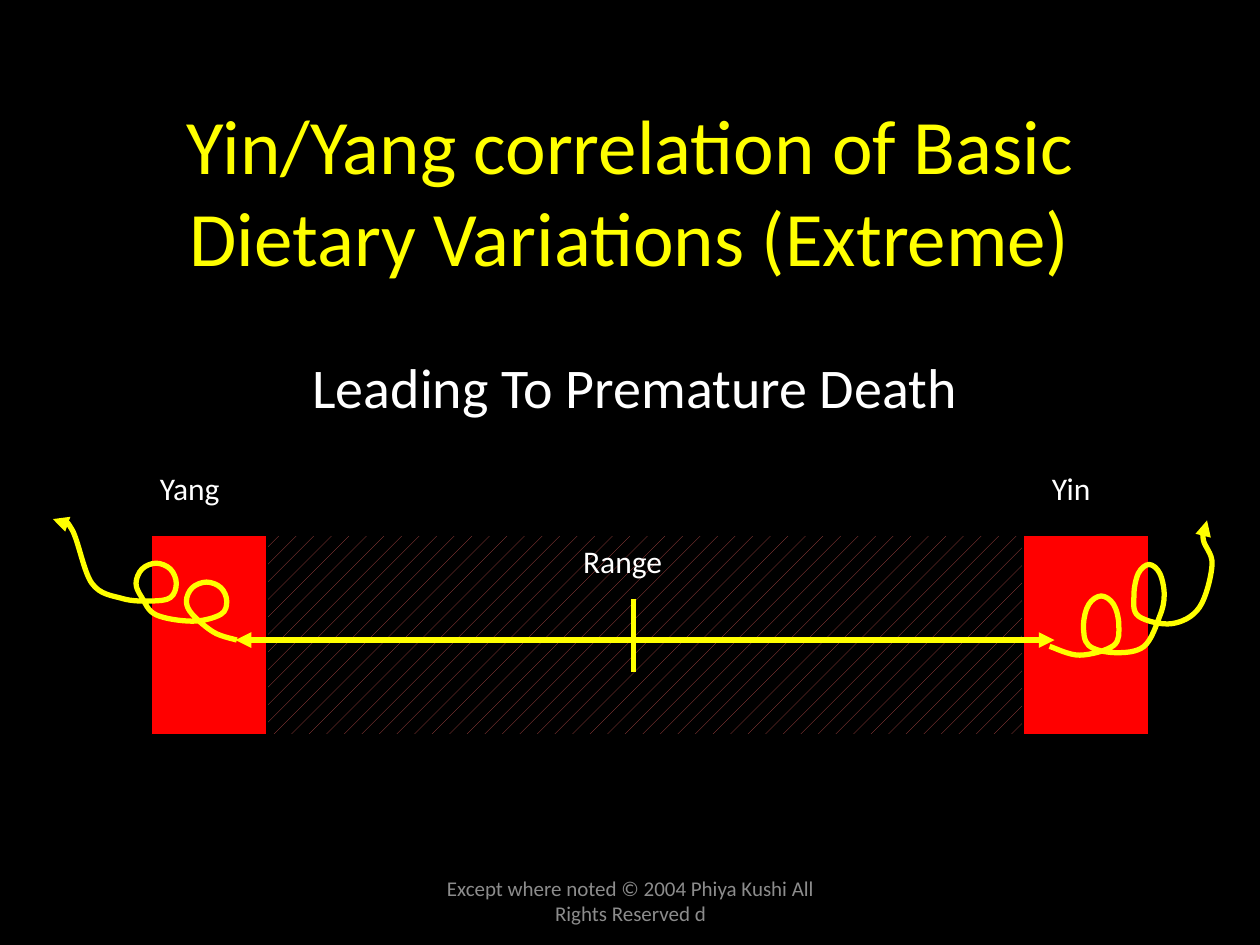
from dataclasses import dataclass
from math import cos, radians, sin

from lxml import etree
from pptx import Presentation
from pptx.dml.color import RGBColor
from pptx.enum.dml import MSO_PATTERN_TYPE as Pattern
from pptx.enum.shapes import MSO_CONNECTOR as Connector, MSO_SHAPE as Shape
from pptx.enum.text import MSO_ANCHOR as Anchor, MSO_AUTO_SIZE as AutoSize, PP_ALIGN as Align
from pptx.oxml.ns import qn
from pptx.util import Inches, Pt

COLORS = {
    "background": "000000",
    "accent": "FFFF00",
    "text": "FFFFFF",
    "footer": "8C8C8C",
    "extreme": "FF0000",
    "hatch": "C0504D",
}
FONT = "Calibri"
CLOCKWISE, COUNTERCLOCKWISE = 1, -1


@dataclass
class Loop:
    center: tuple
    radii: tuple

    def points(self, turn):
        angles = [radians(90 + turn * step) for step in range(45, 316, 45)]
        (x, y), (across, down) = self.center, self.radii
        return [(x + across * cos(angle), y + down * sin(angle)) for angle in angles]


@dataclass
class Spiral:
    turn: int
    lead: list
    inner_loop: Loop
    link: list
    outer_loop: Loop
    tail: list

    def points(self):
        return (self.lead + self.inner_loop.points(self.turn)
                + self.link + self.outer_loop.points(self.turn) + self.tail)


SPIRALS = {
    "Yang": Spiral(
        turn=CLOCKWISE,
        lead=[(0.68, 0.83), (0.5, 0.77)],
        inner_loop=Loop(center=(0.44, 0.52), radii=(0.16, 0.15)),
        link=[(0.33, 0.68), (0.04, 0.63)],
        outer_loop=Loop(center=(0.04, 0.38), radii=(0.16, 0.16)),
        tail=[(0, 0.52), (-0.23, 0.5), (-0.47, 0.38), (-0.63, -0.05), (-0.78, -0.13)],
    ),
    "Yin": Spiral(
        turn=COUNTERCLOCKWISE,
        lead=[(7.13, 0.88), (7.37, 0.95)],
        inner_loop=Loop(center=(7.54, 0.71), radii=(0.14, 0.23)),
        link=[(7.65, 0.93), (7.88, 0.88)],
        outer_loop=Loop(center=(7.92, 0.47), radii=(0.12, 0.24)),
        tail=[(8.1, 0.7), (8.32, 0.57), (8.42, 0.23), (8.35, 0.03), (8.38, -0.12)],
    ),
}


def color(name):
    return RGBColor.from_string(COLORS[name])


def set_attributes(target, values):
    for name, value in values.items():
        setattr(target, name, value)


def fill_solid(fill, color_name):
    fill.solid()
    fill.fore_color.rgb = color(color_name)


def add_text(slide, box, text, size, color_name, align=Align.CENTER,
             anchor=Anchor.TOP, wrap=True):
    shape = slide.shapes.add_textbox(*map(Inches, box))
    frame = shape.text_frame
    set_attributes(frame, {
        "word_wrap": wrap,
        "vertical_anchor": anchor,
        "auto_size": AutoSize.NONE if wrap else AutoSize.SHAPE_TO_FIT_TEXT,
    })
    paragraph = frame.paragraphs[0]
    paragraph.alignment = align
    run = paragraph.add_run()
    run.text = text
    set_attributes(run.font, {"name": FONT, "size": Pt(size)})
    run.font.color.rgb = color(color_name)


def style_line(shape, ends=()):
    shape.line.color.rgb = color("accent")
    shape.line.width = Pt(3)
    line = shape.line._get_or_add_ln()
    for end in ends:
        etree.SubElement(line, qn(f"a:{end}"), type="triangle")


def add_line(slide, start, finish, ends=()):
    points = map(Inches, (*start, *finish))
    connector = slide.shapes.add_connector(Connector.STRAIGHT, *points)
    style_line(connector, ends)
    etree.SubElement(connector._element.spPr, qn("a:effectLst"))


def add_block(slide, box):
    shape = slide.shapes.add_shape(Shape.RECTANGLE, *map(Inches, box))
    shape.shadow.inherit = False
    shape.line.color.rgb = color("background")
    shape.line.width = Pt(0.75)
    return shape


def smooth_controls(points):
    padded = [points[0], *points, points[-1]]
    controls = []
    for before, start, finish, after in zip(padded, padded[1:], padded[2:], padded[3:]):
        leaving = [s + (f - b) / 6 for b, s, f in zip(before, start, finish)]
        arriving = [f - (a - s) / 6 for s, f, a in zip(start, finish, after)]
        controls += [leaving, arriving, finish]
    return controls


def convert_to_curves(shape):
    segments = list(shape._element.iter(qn("a:lnTo")))
    for first in range(0, len(segments), 3):
        curve = etree.Element(qn("a:cubicBezTo"))
        segments[first].addprevious(curve)
        for segment in segments[first:first + 3]:
            curve.append(segment[0])
            segment.getparent().remove(segment)


def add_spiral(slide, origin, spiral):
    points = spiral.points()
    builder = slide.shapes.build_freeform(*map(Inches, points[0]))
    controls = [tuple(map(Inches, point)) for point in smooth_controls(points)]
    builder.add_line_segments(controls, close=False)
    shape = builder.convert_to_shape(*map(Inches, origin))
    shape.shadow.inherit = False
    shape.fill.background()
    style_line(shape, ["tailEnd"])
    convert_to_curves(shape)


def add_headings(slide, box):
    left, top, width, height = box
    add_text(slide, (left, top, width, 1.67),
             "Yin/Yang correlation of Basic Dietary Variations (Extreme)",
             44, "accent", anchor=Anchor.MIDDLE)
    add_text(slide, (left + 1.58, top + height - 0.67, 5.42, 0.67),
             "Leading To Premature Death", 32, "text")


def add_range_diagram(slide, box):
    left, top, width, height = box
    middle = add_block(slide, (left + 0.88, top, 6.08, height))
    middle.fill.patterned()
    middle.fill.pattern = Pattern.PERCENT_5
    middle.fill.fore_color.rgb = color("hatch")
    middle.fill.back_color.rgb = color("background")
    for offset, block_width in ((width - 1, 1), (0, 0.92)):
        block = add_block(slide, (left + offset, top, block_width, height))
        fill_solid(block.fill, "extreme")

    axis, center = top + 0.83, left + 3.83
    add_line(slide, (left + 0.67, axis), (left + 7.17, axis), ["headEnd", "tailEnd"])
    add_line(slide, (center, top + 0.5), (center, top + 1.08))
    labels = (("Yang", -0.03, -0.58, 0.92), ("Yin", 7.05, -0.58, 0.7),
              ("Range", 3.33, 0, 1.05))
    for text, x, y, label_width in labels:
        add_text(slide, (left + x, top + y, label_width, 0.5), text, 18, "text",
                 align=Align.LEFT, wrap=False)
    for spiral in SPIRALS.values():
        add_spiral(slide, (left, top), spiral)


def add_footer(slide, box):
    add_text(slide, box, "Except where noted © 2004 Phiya Kushi All Rights Reserved d",
             12, "footer", anchor=Anchor.MIDDLE)


def main():
    presentation = Presentation()
    set_attributes(presentation, {"slide_width": Inches(10), "slide_height": Inches(7.5)})
    slide = presentation.slides.add_slide(presentation.slide_layouts[6])
    fill_solid(slide.background.fill, "background")
    add_footer(slide, (3.42, 6.95, 3.17, 0.4))
    add_headings(slide, (0.75, 0.67, 8.5, 2.75))
    add_range_diagram(slide, (1.2, 4.25, 7.92, 1.58))
    presentation.save("out.pptx")


if __name__ == "__main__":
    main()
